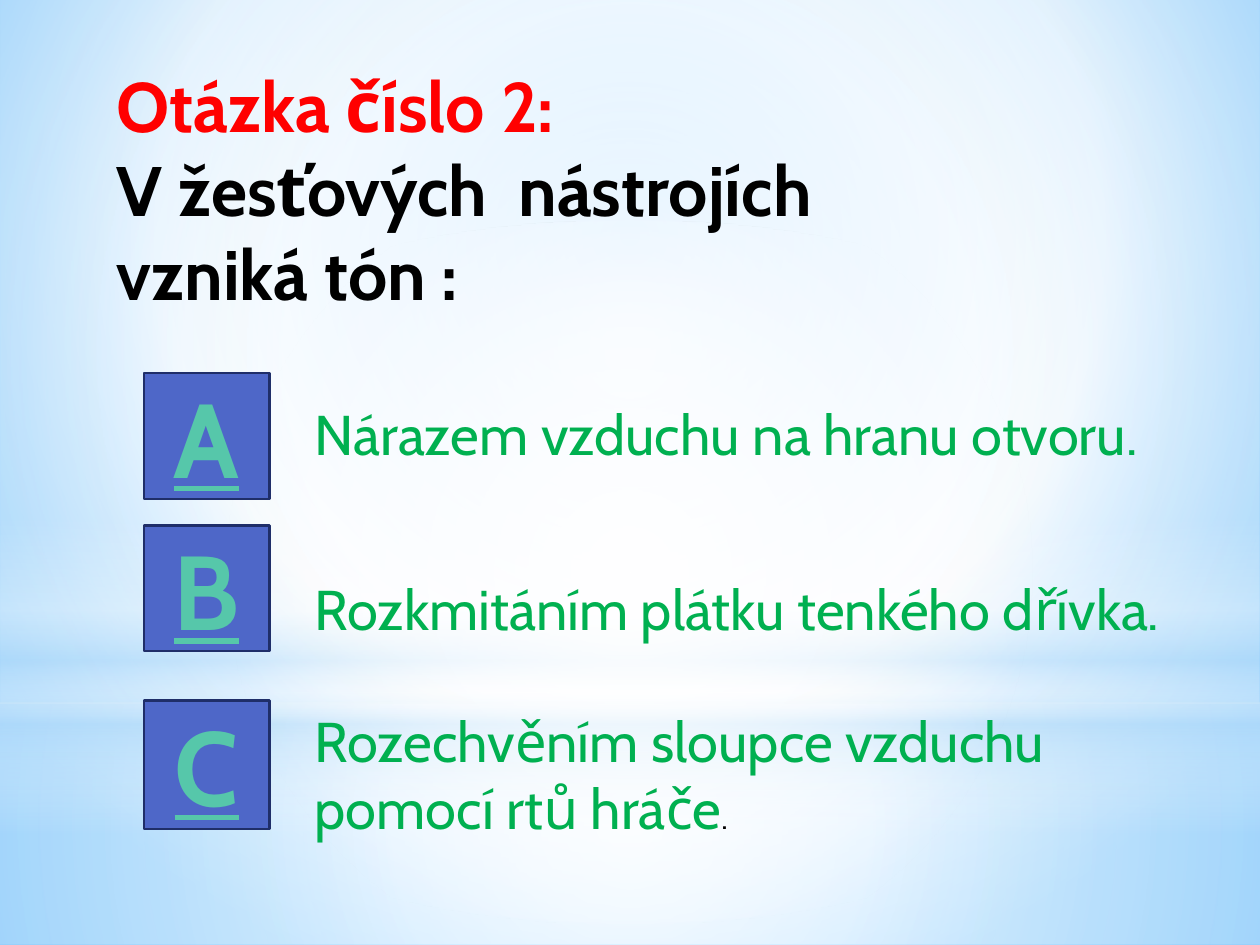
from typing import NamedTuple, Optional

from lxml import etree
from pptx import Presentation
from pptx import util as u
from pptx.dml.color import RGBColor
from pptx.enum import shapes, text
from pptx.oxml import ns

FONT = "Cabin"
WHITE = RGBColor(0xFF, 0xFF, 0xFF)
BLACK = RGBColor(0x00, 0x00, 0x00)
RED = RGBColor(0xFF, 0x00, 0x00)
GREEN = RGBColor(0x00, 0xB0, 0x50)
TEAL = RGBColor(0x56, 0xC7, 0xAA)
INDIGO = RGBColor(0x4E, 0x67, 0xC8)
NAVY = RGBColor(0x1F, 0x2E, 0x69)
PALE = RGBColor(0xB4, 0xDC, 0xFA)
SKY = RGBColor(0x9E, 0xD5, 0xFF)
AZURE = RGBColor(0x5B, 0xB9, 0xFF)

SLIDE_W, SLIDE_H = u.Inches(10), u.Inches(7.5)
TILE_X, TILE_W = 11.4, 10
ANSWER_X = 24


class Box(NamedTuple):
    """Left, top, width and height in percent of the slide."""
    x: float
    y: float
    w: float
    h: float

    def emu(self) -> tuple:
        return tuple(round(share * side / 100) for share, side
                     in zip(self, (SLIDE_W, SLIDE_H) * 2))


class Stop(NamedTuple):
    pos: int
    color: RGBColor
    opacity: int = 100


class Gradient(NamedTuple):
    stops: tuple
    focus: Optional[tuple] = (50, 50, 50, 50)
    angle: int = 0


class Panel(NamedTuple):
    kind: shapes.MSO_SHAPE
    box: Box
    gradient: Gradient


class Answer(NamedTuple):
    letter: str
    wording: str
    tile_y: float
    tile_h: float
    text_y: float
    text_w: float
    text_h: float
    ending: str = ""


RECT, OVAL = shapes.MSO_SHAPE.RECTANGLE, shapes.MSO_SHAPE.OVAL

BACKGROUND = Gradient((Stop(0, SKY), Stop(60, WHITE), Stop(100, AZURE)),
                      (20, 10, 20, 60))
PANELS = (
    Panel(RECT, Box(0, 74.4, 100, 25.6), Gradient(
        (Stop(0, WHITE, 91), Stop(37, WHITE, 76), Stop(100, PALE, 79)))),
    Panel(RECT, Box(0, 0, 100, 74.4), Gradient(
        (Stop(0, WHITE, 89), Stop(48, WHITE, 62), Stop(100, PALE, 79)))),
    Panel(RECT, Box(0, 54.93, 100, 33.33), Gradient(
        (Stop(0, WHITE, 0), Stop(29, WHITE, 30), Stop(45, PALE, 40),
         Stop(55, WHITE, 26), Stop(65, PALE, 60), Stop(100, WHITE, 0)),
        None, 90)),
    Panel(OVAL, Box(0, 23.33, 100, 74.4), Gradient(
        (Stop(0, WHITE), Stop(56, WHITE, 0)))),
)
ANSWERS = (
    Answer("A", "Nárazem vzduchu na hranu otvoru.",
           39.47, 13.33, 41.6, 72.4, 8.53),
    Answer("B", "Rozkmitáním plátku tenkého dřívka.",
           55.6, 13.33, 60.13, 74.8, 8.53),
    Answer("C", "Rozechvěním sloupce vzduchu pomocí rtů hráče",
           74.13, 13.6, 74.13, 63.8, 15.73, "."),
)


def set_gradient(fill, element, gradient: Gradient) -> None:
    fill.gradient()
    grad = element.find(".//" + ns.qn("a:gradFill"))
    for child in list(grad):
        grad.remove(child)
    stops = etree.SubElement(grad, ns.qn("a:gsLst"))
    for stop in gradient.stops:
        gs = etree.SubElement(stops, ns.qn("a:gs"), pos=str(stop.pos * 1000))
        color = etree.SubElement(gs, ns.qn("a:srgbClr"), val=str(stop.color))
        if stop.opacity < 100:
            etree.SubElement(color, ns.qn("a:alpha"),
                             val=str(stop.opacity * 1000))
    if gradient.focus is None:
        etree.SubElement(grad, ns.qn("a:lin"),
                         ang=str(gradient.angle * 60000), scaled="0")
        return
    path = etree.SubElement(grad, ns.qn("a:path"), path="circle")
    sides = {side: str(share * 1000)
             for side, share in zip("ltrb", gradient.focus)}
    etree.SubElement(path, ns.qn("a:fillToRect"), **sides)


def add_panel(s, panel: Panel) -> None:
    sp = s.shapes.add_shape(panel.kind, *panel.box.emu())
    sp.shadow.inherit = False
    sp.line.fill.background()
    set_gradient(sp.fill, sp._element, panel.gradient)


def add_text(s, box: Box):
    tf = s.shapes.add_textbox(*box.emu()).text_frame
    tf.word_wrap = True
    tf.auto_size = text.MSO_AUTO_SIZE.SHAPE_TO_FIT_TEXT
    p = tf.paragraphs[0]
    p.font.name = FONT
    return p


def add_run(p, wording: str, size: float, color: RGBColor) -> None:
    r = p.add_run()
    r.text = wording
    r.font.name = FONT
    r.font.size = u.Pt(size)
    r.font.color.rgb = color
    r.font.bold = p.font.bold


def add_question(s) -> None:
    p = add_text(s, Box(8.3, 6, 72.5, 28.27))
    p.font.bold = True
    p.font.size = u.Pt(40)
    add_run(p, "Otázka číslo 2:", 40, RED)
    p.add_line_break()
    add_run(p, "V žesťových  nástrojích vzniká tón :", 40, BLACK)


def add_answer(s, answer: Answer) -> None:
    box = Box(TILE_X, answer.tile_y, TILE_W, answer.tile_h)
    sp = s.shapes.add_shape(RECT, *box.emu())
    sp.shadow.inherit = False
    sp.fill.solid()
    sp.fill.fore_color.rgb = INDIGO
    sp.line.color.rgb = NAVY
    sp.line.width = u.Pt(1.25)
    tf = sp.text_frame
    tf.vertical_anchor = text.MSO_ANCHOR.MIDDLE
    p = tf.paragraphs[0]
    p.alignment = text.PP_ALIGN.CENTER
    p.font.bold = True
    add_run(p, answer.letter, 60, TEAL)
    p.runs[0].font.underline = True

    p = add_text(s, Box(ANSWER_X, answer.text_y, answer.text_w, answer.text_h))
    add_run(p, answer.wording, 32, GREEN)
    if answer.ending:
        add_run(p, answer.ending, 18, BLACK)


def main() -> None:
    prs = Presentation()
    prs.slide_width, prs.slide_height = SLIDE_W, SLIDE_H
    s = prs.slides.add_slide(prs.slide_layouts[6])
    set_gradient(s.background.fill, s._element, BACKGROUND)
    for panel in PANELS:
        add_panel(s, panel)
    add_question(s)
    for answer in ANSWERS:
        add_answer(s, answer)
    prs.save("out.pptx")


if __name__ == "__main__":
    main()
